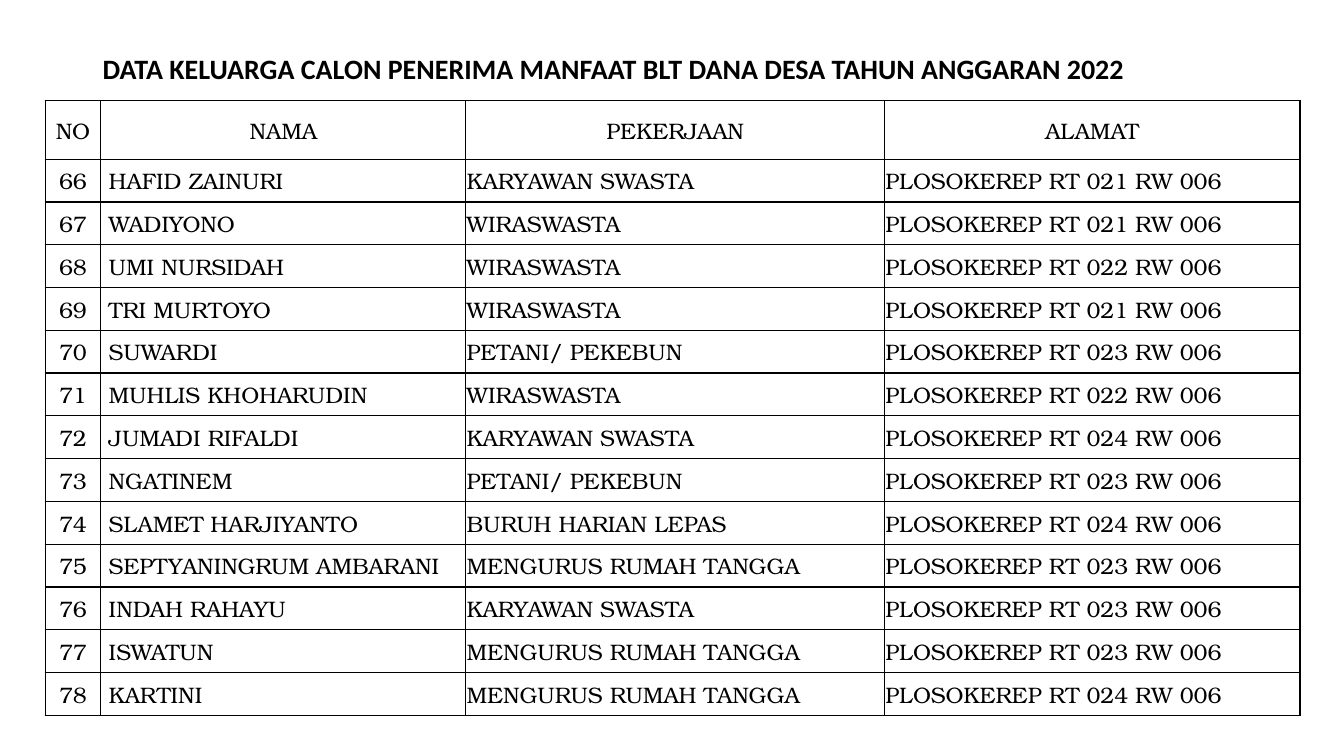
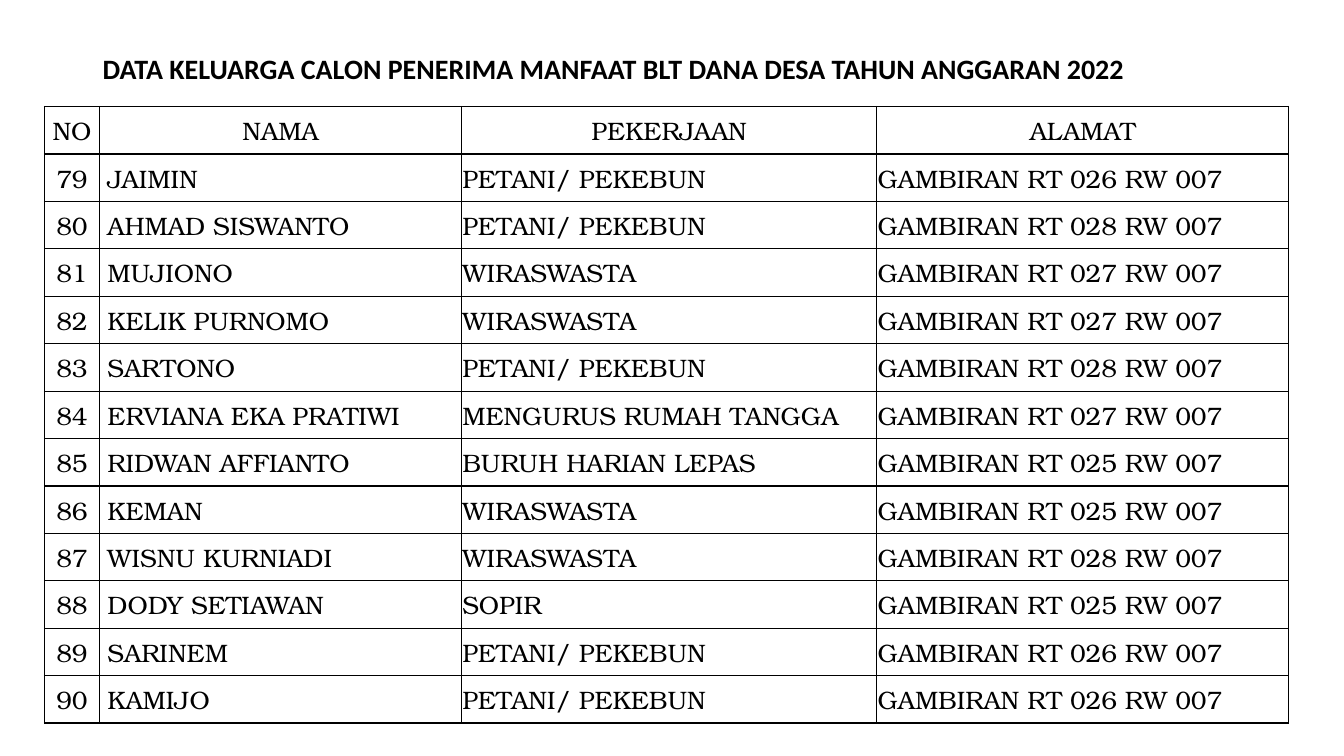
from lxml.etree import SubElement
from pptx import Presentation
from pptx.dml.color import RGBColor
from pptx.enum.text import MSO_ANCHOR, MSO_AUTO_SIZE, PP_ALIGN
from pptx.oxml.ns import qn
from pptx.util import Cm, Pt

# Shared style
INK = "000000"
TITLE_FONT = "Calibri"
TABLE_FONT = "TeX Gyre Bonum"
TITLE = "DATA KELUARGA CALON PENERIMA MANFAAT BLT DANA DESA TAHUN ANGGARAN 2022"
HEADINGS = ("NO", "NAMA", "PEKERJAAN", "ALAMAT")
COLUMN_SHARES = (1.4, 9.2, 10.55, 10.47)
NAME_COLUMN = 1

# Recurring occupations
FARMER = "PETANI/ PEKEBUN"
SELF_EMPLOYED = "WIRASWASTA"
EMPLOYEE = "KARYAWAN SWASTA"
LABOURER = "BURUH HARIAN LEPAS"
HOMEMAKER = "MENGURUS RUMAH TANGGA"

# Families: name, occupation, RT
PLOSOKEREP = [
    ("HAFID ZAINURI", EMPLOYEE, "021"),
    ("WADIYONO", SELF_EMPLOYED, "021"),
    ("UMI NURSIDAH", SELF_EMPLOYED, "022"),
    ("TRI MURTOYO", SELF_EMPLOYED, "021"),
    ("SUWARDI", FARMER, "023"),
    ("MUHLIS KHOHARUDIN", SELF_EMPLOYED, "022"),
    ("JUMADI RIFALDI", EMPLOYEE, "024"),
    ("NGATINEM", FARMER, "023"),
    ("SLAMET HARJIYANTO", LABOURER, "024"),
    ("SEPTYANINGRUM AMBARANI", HOMEMAKER, "023"),
    ("INDAH RAHAYU", EMPLOYEE, "023"),
    ("ISWATUN", HOMEMAKER, "023"),
    ("KARTINI", HOMEMAKER, "024"),
]
GAMBIRAN = [
    ("JAIMIN", FARMER, "026"),
    ("AHMAD SISWANTO", FARMER, "028"),
    ("MUJIONO", SELF_EMPLOYED, "027"),
    ("KELIK PURNOMO", SELF_EMPLOYED, "027"),
    ("SARTONO", FARMER, "028"),
    ("ERVIANA EKA PRATIWI", HOMEMAKER, "027"),
    ("RIDWAN AFFIANTO", LABOURER, "025"),
    ("KEMAN", SELF_EMPLOYED, "025"),
    ("WISNU KURNIADI", SELF_EMPLOYED, "028"),
    ("DODY SETIAWAN", "SOPIR", "025"),
    ("SARINEM", FARMER, "026"),
    ("KAMIJO", FARMER, "026"),
]


def format_text(paragraph, font_name, size, color=INK, bold=False):
    for run in paragraph.runs:
        run.font.name = font_name
        run.font.size = Pt(size)
        run.font.bold = bold
        run.font.color.rgb = RGBColor.from_string(color)


def add_title(slide):
    title = slide.shapes.title
    title.left, title.top = Cm(2.33), Cm(1.02)
    title.width, title.height = Cm(29.21), Cm(1.52)
    frame = title.text_frame
    frame.text = TITLE
    frame.auto_size = MSO_AUTO_SIZE.NONE
    frame.vertical_anchor = MSO_ANCHOR.MIDDLE
    heading = frame.paragraphs[0]
    heading.alignment = PP_ALIGN.LEFT
    heading.line_spacing = 0.9
    format_text(heading, TITLE_FONT, 20, bold=True)


def set_borders(cell, color=INK, width=1):
    properties = cell._tc.get_or_add_tcPr()
    for side in ("a:lnL", "a:lnR", "a:lnT", "a:lnB"):
        border = SubElement(properties, qn(side), w=str(Pt(width)))
        fill = SubElement(border, qn("a:solidFill"))
        SubElement(fill, qn("a:srgbClr"), val=color)


def fill_cell(cell, text, size, centred, indent):
    set_borders(cell)
    cell.fill.background()
    cell.vertical_anchor = MSO_ANCHOR.MIDDLE
    cell.margin_left = Cm(indent)
    cell.margin_right = cell.margin_top = Cm(0.02)
    cell.margin_bottom = 0
    paragraph = cell.text_frame.paragraphs[0]
    paragraph.text = text
    paragraph.alignment = PP_ALIGN.CENTER if centred else PP_ALIGN.LEFT
    format_text(paragraph, TABLE_FONT, size)


def add_family_table(slide, records, box, header_height, size):
    left, top, width, height = box
    rows = [HEADINGS, *records]
    table = slide.shapes.add_table(
        len(rows), len(HEADINGS), Cm(left), Cm(top), Cm(width), Cm(height)
    ).table
    table.first_row = table.horz_banding = False

    # Columns share the width; family rows share what the header leaves
    for column, share in zip(table.columns, COLUMN_SHARES):
        column.width = Cm(width * share / sum(COLUMN_SHARES))
    for row in table.rows:
        row.height = Cm((height - header_height) / len(records))
    table.rows[0].height = Cm(header_height)

    for r, values in enumerate(rows):
        for c, value in enumerate(values):
            is_header = r == 0
            indent = 0.2 if c == NAME_COLUMN and not is_header else 0.02
            fill_cell(table.cell(r, c), value, size, is_header or c == 0, indent)


def number_families(families, first_number, hamlet, rw):
    return [
        (str(number), name, occupation, f"{hamlet} RT {rt} RW {rw}")
        for number, (name, occupation, rt) in enumerate(families, first_number)
    ]


def main():
    presentation = Presentation()
    presentation.slide_width, presentation.slide_height = Cm(33.87), Cm(19.05)
    title_only = presentation.slide_layouts[5]

    # Records, table box, header height, text size
    pages = [
        (number_families(PLOSOKEREP, 66, "PLOSOKEREP", "006"),
         (1.14, 2.53, 31.62, 15.5), 1.48, 16),
        (number_families(GAMBIRAN, 79, "GAMBIRAN", "007"),
         (1.12, 2.68, 31.36, 15.54), 1.2, 18),
    ]
    for records, box, header_height, size in pages:
        slide = presentation.slides.add_slide(title_only)
        add_title(slide)
        add_family_table(slide, records, box, header_height, size)

    presentation.save("out.pptx")


if __name__ == "__main__":
    main()
